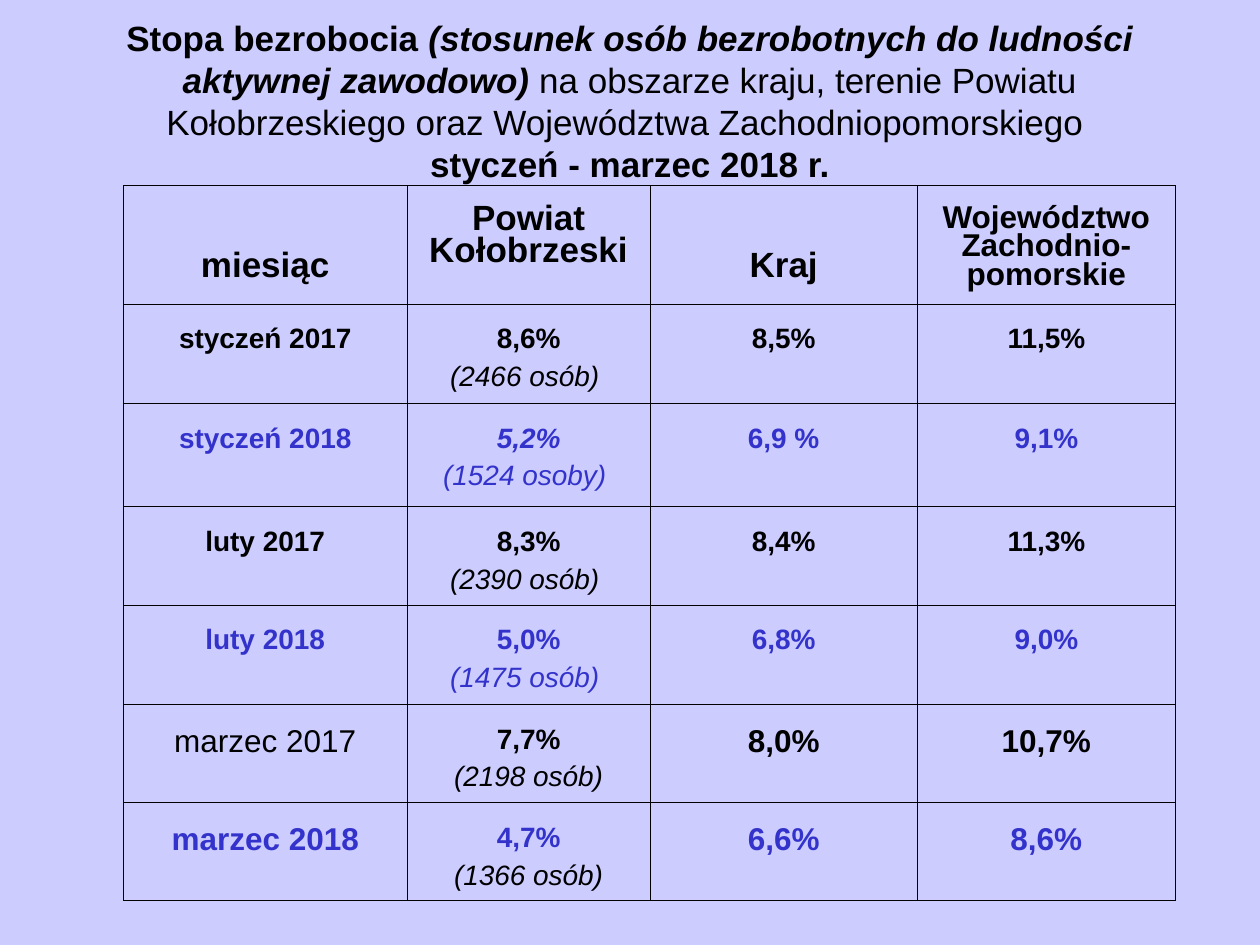
from lxml import etree
from pptx import Presentation
from pptx.dml.color import RGBColor
from pptx.enum.text import MSO_ANCHOR, PP_ALIGN
from pptx.oxml.ns import qn
from pptx.util import Inches, Pt

CENTER = PP_ALIGN.CENTER
TOP, MIDDLE = MSO_ANCHOR.TOP, MSO_ANCHOR.MIDDLE

BACKGROUND = RGBColor(0xCC, 0xCC, 0xFF)
BLACK = RGBColor(0, 0, 0)
BLUE = RGBColor(0x33, 0x33, 0xCC)

THIN, OUTER = Pt(0.11), Pt(0.23)
COLUMNS = [2.25, 1.93, 2.12, 2.05]
ROWS = [0.94, 0.79, 0.82, 0.77, 0.79, 0.75, 0.78]

TITLE = [
    [("Stopa bezrobocia ", {"bold": True}),
     ("(stosunek osób bezrobotnych do ludności aktywnej zawodowo)",
      {"bold": True, "italic": True}),
     (" na obszarze kraju, terenie Powiatu Kołobrzeskiego oraz "
      "Województwa Zachodniopomorskiego ", {})],
    [("styczeń - marzec 2018 r.", {"bold": True})],
]

# heading, size, top margin
HEADERS = [
    ("miesiąc", 20, 0.53),
    ("Powiat Kołobrzeski", 20, 0.16),
    ("Kraj", 20, 0.53),
    ("Województwo Zachodnio-pomorskie", 18, 0.16),
]

# month, county rate, unemployed, country rate, region rate, size, colour
MONTHS = [
    ("styczeń 2017", "8,6%", "(2466 osób) ", "8,5%", "11,5%", 16, BLACK),
    ("styczeń 2018", "5,2%", "(1524 osoby) ", "6,9 %", "9,1%", 16, BLUE),
    ("luty 2017", "8,3%", "(2390 osób) ", "8,4%", "11,3%", 16, BLACK),
    ("luty 2018", "5,0%", "(1475 osób) ", "6,8%", "9,0%", 16, BLUE),
    ("marzec 2017", "7,7%", "(2198 osób)", "8,0%", "10,7%", 18, BLACK),
    ("marzec 2018", "4,7%", "(1366 osób)", "6,6%", "8,6%", 18, BLUE),
]

# Formats that depart from the row's rule
EXCEPTIONS = {
    "5,2%": {"italic": True},
    "marzec 2017": {"bold": False},
    "(1366 osób)": {"color": BLACK},
}


class SlideBuilder:
    font = "Arial"

    def __init__(self, slide):
        self.slide = slide
        fill = slide.background.fill
        fill.solid()
        fill.fore_color.rgb = BACKGROUND

    def run(self, p, text, size=20, color=BLACK, **fmt):
        r = p.add_run()
        r.text = text
        r.font.color.rgb = color
        values = {"name": self.font, "size": Pt(size),
                  "bold": False, "italic": False, **fmt}
        for name, value in values.items():
            setattr(r.font, name, value)

    def title(self, lines, left, top, width, height):
        box = self.slide.shapes.add_textbox(
            Inches(left), Inches(top), Inches(width), Inches(height))
        tf = box.text_frame
        tf.word_wrap = True
        tf.vertical_anchor = MIDDLE
        p = tf.paragraphs[0]
        p.alignment = CENTER
        for i, runs in enumerate(lines):
            if i:
                p.add_line_break()
            for text, fmt in runs:
                self.run(p, text, **fmt)

    def table(self, left, top, columns, rows):
        frame = self.slide.shapes.add_table(
            len(rows), len(columns), Inches(left), Inches(top),
            Inches(sum(columns)), Inches(sum(rows)))
        table = frame.table
        table.first_row = table.horz_banding = False
        for column, width in zip(table.columns, columns):
            column.width = Inches(width)
        for row, height in zip(table.rows, rows):
            row.height = Inches(height)
        last_row, last_column = len(rows) - 1, len(columns) - 1
        for i, row in enumerate(table.rows):
            for j, cell in enumerate(row.cells):
                cell.fill.background()
                self.borders(cell, {"L": j == 0, "R": j == last_column,
                                    "T": i == 0, "B": i == last_row})
        return table

    def borders(self, cell, outer_sides):
        """Draw four black edges, heavier where the side is on the outside."""
        tc_pr = cell._tc.get_or_add_tcPr()
        for i, (side, outer) in enumerate(outer_sides.items()):
            ln = etree.Element(qn(f"a:ln{side}"), w=str(OUTER if outer else THIN))
            fill = etree.SubElement(ln, qn("a:solidFill"))
            etree.SubElement(fill, qn("a:srgbClr"), val=str(BLACK))
            tc_pr.insert(i, ln)

    def cell(self, cell, lines, margin_top, space_before):
        """Fill a cell with one paragraph for each (text, format) line."""
        cell.vertical_anchor = TOP
        cell.margin_top = Inches(margin_top)
        tf = cell.text_frame
        for i, (text, fmt) in enumerate(lines):
            p = tf.add_paragraph() if i else tf.paragraphs[0]
            p.alignment = CENTER
            p.line_spacing = 0.81
            p.space_before = Pt(space_before)
            self.run(p, text, **{**fmt, **EXCEPTIONS.get(text, {})})


def main():
    prs = Presentation()
    prs.slide_width, prs.slide_height = Inches(10), Inches(7.5)
    s = SlideBuilder(prs.slides.add_slide(prs.slide_layouts[6]))

    s.title(TITLE, 0.5, 0.13, 9, 1.34)
    table = s.table(0.98, 1.47, COLUMNS, ROWS)

    for j, (heading, size, margin) in enumerate(HEADERS):
        s.cell(table.cell(0, j), [(heading, {"size": size, "bold": True})], margin, 5)

    for i, (month, county, people, country, region, size, color) in enumerate(MONTHS, 1):
        main_fmt = {"size": size, "color": color, "bold": True}
        county_fmt = {**main_fmt, "size": 16}
        people_fmt = {"size": 16, "color": color, "italic": True}
        contents = [
            [(month, main_fmt)],
            [(county, county_fmt), (people, people_fmt)],
            [(country, main_fmt)],
            [(region, main_fmt)],
        ]
        for j, lines in enumerate(contents):
            s.cell(table.cell(i, j), lines, 0.2, 7)

    prs.save("out.pptx")


if __name__ == "__main__":
    main()
